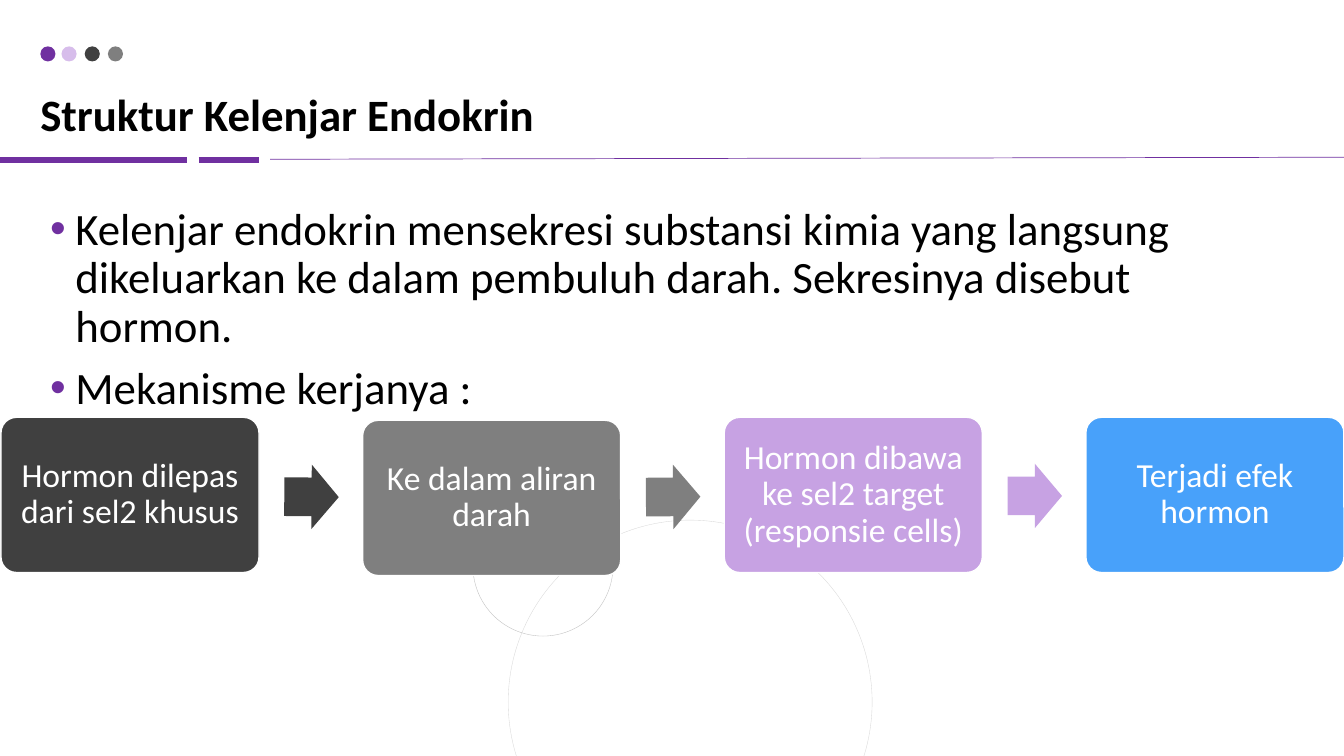
import pptx
import pptx.util
import pptx.dml.color
import pptx.enum.shapes
import pptx.enum.text
import pptx.oxml
import pptx.oxml.ns
from lxml import etree

Inches = pptx.util.Inches
Pt = pptx.util.Pt
SHAPES = pptx.enum.shapes.MSO_SHAPE
ANCHOR = pptx.enum.text.MSO_ANCHOR
ALIGN = pptx.enum.text.PP_ALIGN
qn = pptx.oxml.ns.qn

COLORS = {
    "purple": "7030A0", "lilac": "C7A2E3", "dark": "404040", "gray": "7F7F7F",
    "blue": "48A1FA", "black": "000000", "white": "FFFFFF",
    "ring_light": "D9D9D9", "ring": "BFBFBF",
}
FONT = "Calibri"

TITLE = "Struktur Kelenjar Endokrin"
BULLETS = [
    "Kelenjar endokrin mensekresi substansi kimia yang langsung dikeluarkan "
    "ke dalam pembuluh darah. Sekresinya disebut hormon.",
    "Mekanisme kerjanya :",
]
# text, color, drop below the row, rotation of the arrow that follows
STEPS = [
    ("Hormon dilepas dari sel2 khusus", "dark", 0, 0.5),
    ("Ke dalam aliran darah", "gray", 0.03, -0.5),
    ("Hormon dibawa ke sel2 target (responsie cells)", "lilac", 0, 0),
    ("Terjadi efek hormon", "blue", 0, None),
]


def rgb(name):
    return pptx.dml.color.RGBColor.from_string(COLORS[name])


def add_shape(page, kind, left, top, width, height, fill=None, line=None, weight=1):
    shape = page.shapes.add_shape(
        kind, Inches(left), Inches(top), Inches(width), Inches(height))
    shape.shadow.inherit = False
    if fill:
        shape.fill.solid()
        shape.fill.fore_color.rgb = rgb(fill)
    else:
        shape.fill.background()
    if line:
        shape.line.color.rgb = rgb(line)
        shape.line.width = Pt(weight)
    else:
        shape.line.fill.background()
    return shape


def add_line(page, start, end, weight):
    line = page.shapes.add_connector(
        pptx.enum.shapes.MSO_CONNECTOR.STRAIGHT, *[Inches(n) for n in start + end])
    line.line.color.rgb = rgb("purple")
    line.line.width = Pt(weight)
    etree.SubElement(line._element.spPr, qn("a:effectLst"))


def set_frame(frame, anchor, inset_x, inset_y):
    frame.word_wrap = True
    frame.vertical_anchor = anchor
    frame.margin_left = frame.margin_right = Inches(inset_x)
    frame.margin_top = frame.margin_bottom = Inches(inset_y)


def write(para, text, size, color, bold=False):
    para.text = text
    para.line_spacing = 0.9
    for span in para.runs:
        span.font.name = FONT
        span.font.size = Pt(size)
        span.font.bold = bold
        span.font.color.rgb = rgb(color)


def add_bullet(para):
    props = para._p.get_or_add_pPr()
    props.set("marL", str(Inches(0.25)))
    props.set("indent", str(-Inches(0.25)))
    color = etree.SubElement(props, qn("a:buClr"))
    etree.SubElement(color, qn("a:srgbClr"), val=COLORS["purple"])
    etree.SubElement(props, qn("a:buFont"), typeface="Arial")
    etree.SubElement(props, qn("a:buChar"), char="•")


def add_decoration(page):
    # Rule under the title
    add_line(page, (-0.03, 1.59), (1.85, 1.59), 4.5)
    add_line(page, (1.97, 1.59), (2.57, 1.59), 4.5)
    add_line(page, (2.68, 1.58), (13.33, 1.56), 0.5)
    # Dots above the title
    for left, color in ((0.4, "purple"), (0.61, "lilac"), (0.84, "dark"), (1.07, "gray")):
        dot = add_shape(page, SHAPES.OVAL, left, 0.46, 0.15, 0.15, color)
        if color == "lilac":
            fill = dot._element.spPr.find(".//" + qn("a:srgbClr"))
            etree.SubElement(fill, qn("a:alpha"), val="70000")
    # Thin rings
    add_shape(page, SHAPES.OVAL, 5.04, 5.16, 3.61, 3.61, line="ring_light", weight=0.25)
    add_shape(page, SHAPES.OVAL, 4.69, 4.92, 1.39, 1.39, line="ring", weight=0.25)


def add_title(page, left, top, width, height):
    box = page.shapes.add_textbox(
        Inches(left), Inches(top), Inches(width), Inches(height))
    set_frame(box.text_frame, ANCHOR.BOTTOM, 0, 0)
    write(box.text_frame.paragraphs[0], TITLE, 32, "black", bold=True)


def add_body(page, left, top, width, height):
    box = page.shapes.add_textbox(
        Inches(left), Inches(top), Inches(width), Inches(height))
    frame = box.text_frame
    set_frame(frame, ANCHOR.TOP, 0.1, 0.05)
    for index, text in enumerate(BULLETS):
        para = frame.add_paragraph() if index else frame.paragraphs[0]
        write(para, text, 32, "black")
        para.space_before = Pt(10)
        add_bullet(para)


def add_process(page, left, top, width, height):
    step_width = 2.56
    pitch = (width - step_width) / (len(STEPS) - 1)
    arrow_width, arrow_height = 0.54, 0.64
    for index, (text, color, drop, turn) in enumerate(STEPS):
        step_left = left + index * pitch
        step = add_shape(page, SHAPES.ROUNDED_RECTANGLE, step_left, top + drop,
                         step_width, height, color, "white")
        step.adjustments[0] = 0.1
        set_frame(step.text_frame, ANCHOR.MIDDLE, 0.1, 0.1)
        para = step.text_frame.paragraphs[0]
        write(para, text, 24, "white")
        para.alignment = ALIGN.CENTER
        if turn is None:
            continue
        # Arrow to the next step
        arrow_top = top + (height - arrow_height) / 2 + (0.02 if turn else 0.01)
        arrow = add_shape(page, SHAPES.RIGHT_ARROW, step_left + step_width + 0.25,
                          arrow_top, arrow_width, arrow_height, color)
        arrow.adjustments[0] = 0.6
        arrow.adjustments[1] = 0.5
        arrow.rotation = turn


def main():
    deck = pptx.Presentation()
    deck.slide_width = Inches(13.33)
    deck.slide_height = Inches(7.5)
    page = deck.slides.add_slide(deck.slide_layouts[6])
    add_decoration(page)
    add_title(page, 0.4, 0.4, 12.54, 1)
    add_body(page, 0.4, 2, 12.54, 4.76)
    add_process(page, 0.01, 4.14, 13.32, 1.54)
    deck.save("out.pptx")


if __name__ == "__main__":
    main()
